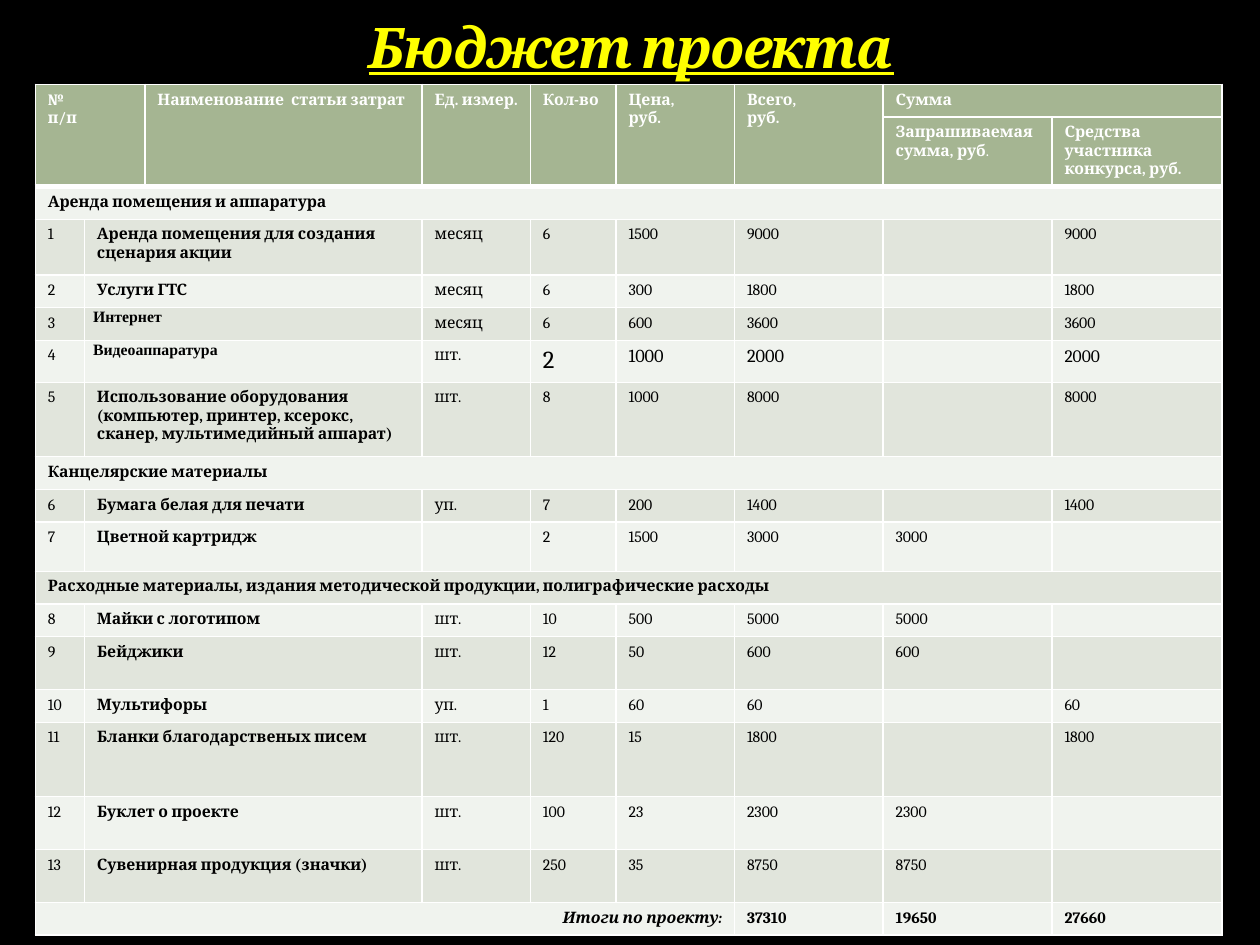
from lxml import etree
from pptx import Presentation
from pptx import util as u
from pptx.dml.color import RGBColor
from pptx.enum import text
from pptx.oxml import ns


def paint(fill, colour):
    fill.solid()
    fill.fore_color.rgb = RGBColor.from_string(colour)


def write(paragraph, words, size=9, font="Cambria", colour="000000", bold=False,
          italic=False, underline=False, align=text.PP_ALIGN.LEFT):
    paragraph.alignment = align
    if not words:
        ending = etree.SubElement(paragraph._p, ns.qn("a:endParaRPr"))
        ending.set("sz", str(size * 100))
        return None
    run = paragraph.add_run()
    run.text = words
    run.font.size = u.Pt(size)
    run.font.name = font
    run.font.bold = bold
    run.font.italic = italic
    run.font.underline = underline
    paint(run.font.fill, colour)
    return run


presentation = Presentation()
presentation.slide_width = u.Inches(10)
presentation.slide_height = u.Inches(7.5)
slide = presentation.slides.add_slide(presentation.slide_layouts[6])
paint(slide.background.fill, "000000")

title = slide.shapes.add_textbox(u.Inches(0.51), 0, u.Inches(9), u.Inches(0.68)).text_frame
title.word_wrap = True
title.vertical_anchor = text.MSO_ANCHOR.BOTTOM
title_run = write(title.paragraphs[0], "Бюджет проекта", size=32, colour="FFFF00", bold=True,
                  italic=True, underline=True, align=text.PP_ALIGN.CENTER)
title_run._r.get_or_add_rPr().set("spc", "-100")

columns = [0.39, 0.48, 2.2, 0.86, 0.68, 0.94, 1.18, 1.34, 1.35]
row_height = 0.26
tall_rows = {1: 0.53, 3: 0.44, 6: 0.33, 7: 0.59, 10: 0.39, 13: 0.42, 15: 0.59, 16: 0.42, 17: 0.42}
rows = [tall_rows.get(index, row_height) for index in range(19)]

header = {
    (0, 0): "№\nп/п", (0, 2): "Наименование  статьи затрат", (0, 3): "Ед. измер.",
    (0, 4): "Кол-во", (0, 5): "Цена,\nруб.", (0, 6): "Всего,\nруб.", (0, 7): "Сумма",
    (1, 7): "Запрашиваемая сумма, руб", (1, 8): "Средства участника конкурса, руб.",
}
budget = [
    ["Аренда помещения и аппаратура"],
    ["1", "Аренда помещения для создания  сценария акции", "месяц", "6", "1500", "9000", "", "9000"],
    ["2", "Услуги ГТС", "месяц", "6", "300", "1800", "", "1800"],
    ["3", "Интернет", "месяц", "6", "600", "3600", "", "3600"],
    ["4", "Видеоаппаратура", "шт.", "2", "1000", "2000", "", "2000"],
    ["5", "Использование оборудования (компьютер, принтер, ксерокс, сканер, мультимедийный аппарат)",
     "шт.", "8", "1000", "8000", "", "8000"],
    ["Канцелярские материалы"],
    ["6", "Бумага белая для печати", "уп.", "7", "200", "1400", "", "1400"],
    ["7", "Цветной картридж", "", "2", "1500", "3000", "3000", ""],
    ["Расходные материалы, издания методической продукции, полиграфические расходы"],
    ["8", "Майки с логотипом", "шт.", "10", "500", "5000", "5000", ""],
    ["9", "Бейджики", "шт.", "12", "50", "600", "600", ""],
    ["10", "Мультифоры", "уп.", "1", "60", "60", "", "60"],
    ["11", "Бланки благодарственых писем", "шт.", "120", "15", "1800", "", "1800"],
    ["12", "Буклет о проекте", "шт.", "100", "23", "2300", "2300", ""],
    ["13", "Сувенирная продукция (значки)", "шт.", "250", "35", "8750", "8750", ""],
    ["Итоги по проекту:", "37310", "19650", "27660"],
]
starts = {1: [0], 4: [0, 6, 7, 8], 8: [0, 1, 3, 4, 5, 6, 7, 8]}
special_sizes = {(6, 4): 14, (6, 5): 10.5, (6, 6): 10.5, (6, 8): 10}
compact_names = ["Интернет", "Видеоаппаратура"]

table = slide.shapes.add_table(len(rows), len(columns), u.Inches(0.28), u.Inches(0.67),
                               u.Inches(sum(columns)), u.Inches(sum(rows))).table
for column, width in zip(table.columns, columns):
    column.width = u.Inches(width)
for row, height in zip(table.rows, rows):
    row.height = u.Inches(height)

table.cell(0, 0).merge(table.cell(1, 1))
table.cell(0, 7).merge(table.cell(0, 8))
for column in range(2, 7):
    table.cell(0, column).merge(table.cell(1, column))

contents = dict(header)
for row, entries in enumerate(budget, 2):
    edges = starts[len(entries)] + [len(columns)]
    for entry, start, end in zip(entries, edges, edges[1:]):
        contents[row, start] = entry
        if end - start > 1:
            table.cell(row, start).merge(table.cell(row, end - 1))

for row in range(len(rows)):
    for column in range(len(columns)):
        cell = table.cell(row, column)
        words = contents.get((row, column), "")
        in_header = row < 2
        is_total = row == len(rows) - 1
        is_section = row > 1 and len(budget[row - 2]) == 1
        compact = words in compact_names
        lines = words.split("\n")
        for number, line in enumerate(lines):
            paragraph = cell.text_frame.paragraphs[0] if number == 0 else cell.text_frame.add_paragraph()
            write(paragraph, line, size=special_sizes.get((row, column), 9),
                  font="Times New Roman" if compact else "Cambria",
                  colour="FFFFFF" if in_header else "000000",
                  bold=in_header or is_total or is_section or column == 1,
                  italic=is_total and column == 0,
                  align=text.PP_ALIGN.RIGHT if is_total and column == 0 else text.PP_ALIGN.LEFT)
        if (row, column) == (1, 7):
            write(paragraph, ".", colour="FFFFFF")
        if compact:
            cell.margin_left = cell.margin_right = u.Inches(0.07)
            cell.margin_top = cell.margin_bottom = 0
            paragraph.line_spacing = 1.07
            paragraph.space_after = u.Pt(10)
        properties = cell._tc.get_or_add_tcPr()
        thick_bottom = row == 1 or row == 0 and column < 7
        thick_top = row == 2
        for side in ["lnL", "lnR", "lnT", "lnB"]:
            thick = side == "lnB" and thick_bottom or side == "lnT" and thick_top
            border = etree.SubElement(properties, ns.qn("a:" + side), w=str(u.Pt(3 if thick else 1)))
            border_fill = etree.SubElement(border, ns.qn("a:solidFill"))
            etree.SubElement(border_fill, ns.qn("a:srgbClr"), val="FFFFFF")
        paint(cell.fill, "A5B592" if in_header else ["F0F3EE", "E1E5DC"][row % 2])

presentation.save("out.pptx")
